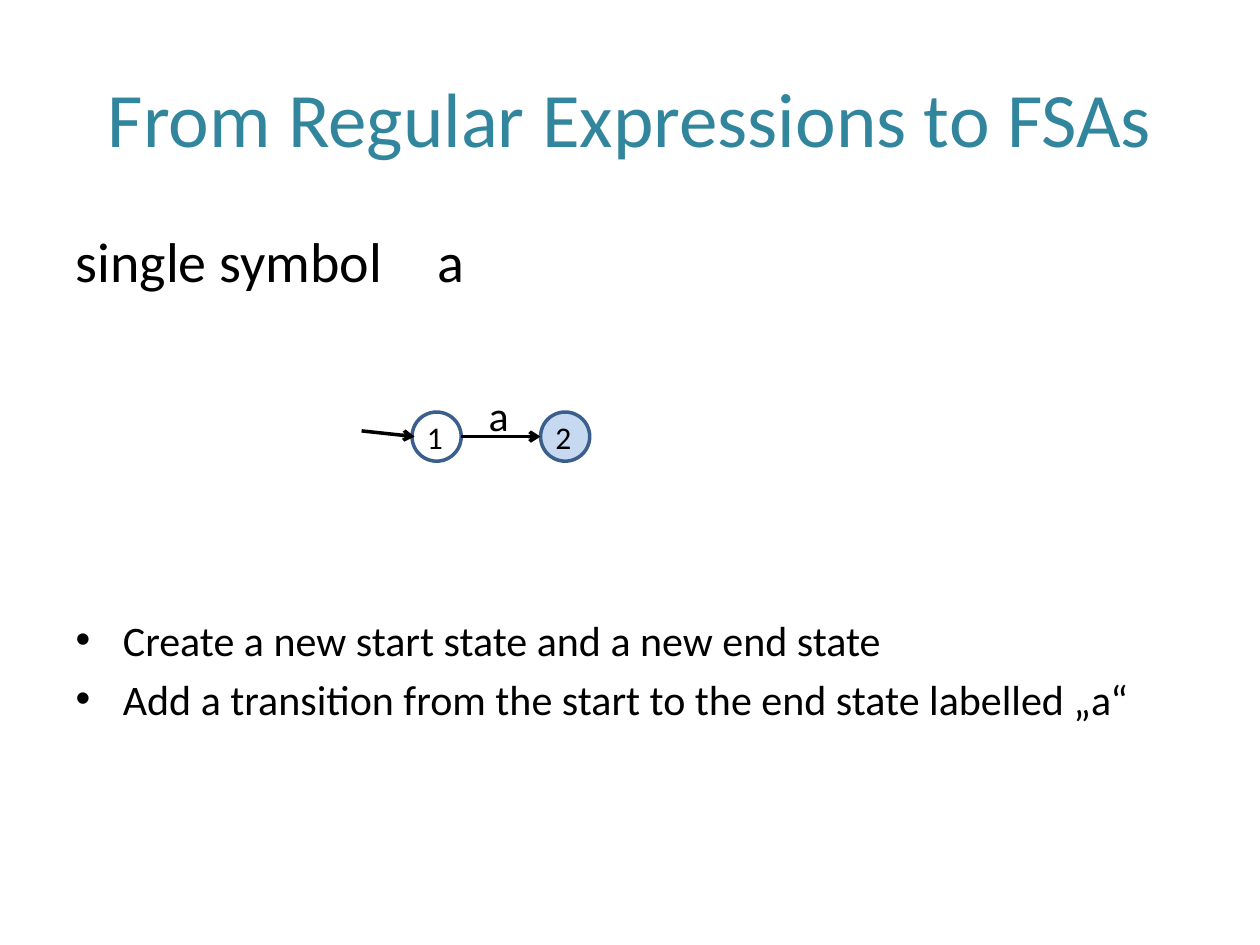
from lxml.etree import SubElement
from pptx import Presentation
from pptx.dml.color import RGBColor
from pptx.enum.shapes import MSO_CONNECTOR, MSO_SHAPE
from pptx.enum.text import MSO_ANCHOR, MSO_AUTO_SIZE, PP_ALIGN
from pptx.oxml.ns import qn
from pptx.util import Inches, Pt

COLORS = {"title": "31859C", "text": "000000", "outline": "3A5F8C", "end": "C6D9F1"}
FONT = "Calibri"
STATE_SIZE = 0.39
STATE_TOP = 3.27
START_LEFT, END_LEFT = 3.27, 4.29


def color(name):
    return RGBColor.from_string(COLORS[name])


def style(para, size, name="text"):
    for font in (para.font, *(span.font for span in para.runs)):
        font.name = FONT
        font.size = Pt(size)
        font.color.rgb = color(name)


def place(shape, left, top, width, height):
    shape.left, shape.top = Inches(left), Inches(top)
    shape.width, shape.height = Inches(width), Inches(height)


def fill_title(page, text):
    title = page.shapes.title
    place(title, 0.5, 0.3, 9, 1.25)
    title.text_frame.text = text
    title.text_frame.vertical_anchor = MSO_ANCHOR.MIDDLE
    para = title.text_frame.paragraphs[0]
    para.alignment = PP_ALIGN.CENTER
    style(para, 44, "title")


def fill_body(page, heading, steps, gap):
    body = page.placeholders[1]
    place(body, 0.5, 1.75, 9, 4.95)
    frame = body.text_frame
    frame.text = "\n".join([heading, *steps])
    frame.auto_size = MSO_AUTO_SIZE.NONE
    first, *bullets = frame.paragraphs
    properties = first._p.get_or_add_pPr()
    SubElement(properties, qn("a:buNone"))
    tabs = SubElement(properties, qn("a:tabLst"))
    SubElement(tabs, qn("a:tab"), pos=str(Inches(3.24)), algn="l")
    style(first, 32)
    bullets[0].space_before = Pt(gap)
    for para in bullets:
        style(para, 24)


def add_label(page, text, left, top, width, height, size):
    box = page.shapes.add_textbox(*map(Inches, (left, top, width, height)))
    frame = box.text_frame
    frame.text = text
    frame.word_wrap = False
    frame.auto_size = MSO_AUTO_SIZE.SHAPE_TO_FIT_TEXT
    style(frame.paragraphs[0], size)


def add_state(page, number, left, fill=None):
    area = map(Inches, (left, STATE_TOP, STATE_SIZE, STATE_SIZE))
    state = page.shapes.add_shape(MSO_SHAPE.OVAL, *area)
    state.shadow.inherit = False
    state.line.color.rgb = color("outline")
    state.line.width = Pt(2)
    if fill:
        state.fill.solid()
        state.fill.fore_color.rgb = color(fill)
    else:
        state.fill.background()
    add_label(page, number, left + 0.02, STATE_TOP, 0.33, 0.4, 18)


def add_arrow(page, start, end):
    ends = map(Inches, (*start, *end))
    arrow = page.shapes.add_connector(MSO_CONNECTOR.STRAIGHT, *ends)
    arrow.line.color.rgb = color("text")
    arrow.line.width = Pt(2)
    properties = arrow._element.spPr
    SubElement(properties.find(qn("a:ln")), qn("a:tailEnd"), type="arrow")
    SubElement(properties, qn("a:effectLst"))


def main():
    deck = Presentation()
    deck.slide_width, deck.slide_height = Inches(10), Inches(7.5)
    page = deck.slides.add_slide(deck.slide_layouts[1])
    fill_title(page, "From Regular Expressions to FSAs")
    steps = [
        "Create a new start state and a new end state",
        "Add a transition from the start to the end state labelled „a“",
    ]
    fill_body(page, "single symbol\ta", steps, gap=183)
    add_state(page, "1", START_LEFT)
    add_state(page, "2", END_LEFT, "end")
    middle = STATE_TOP + STATE_SIZE / 2
    add_arrow(page, (2.87, 3.42), (START_LEFT + 0.02, middle))
    add_arrow(page, (START_LEFT + STATE_SIZE, middle), (END_LEFT, middle))
    add_label(page, "a", 3.78, 3.04, 0.36, 0.5, 24)
    deck.save("out.pptx")


if __name__ == "__main__":
    main()
